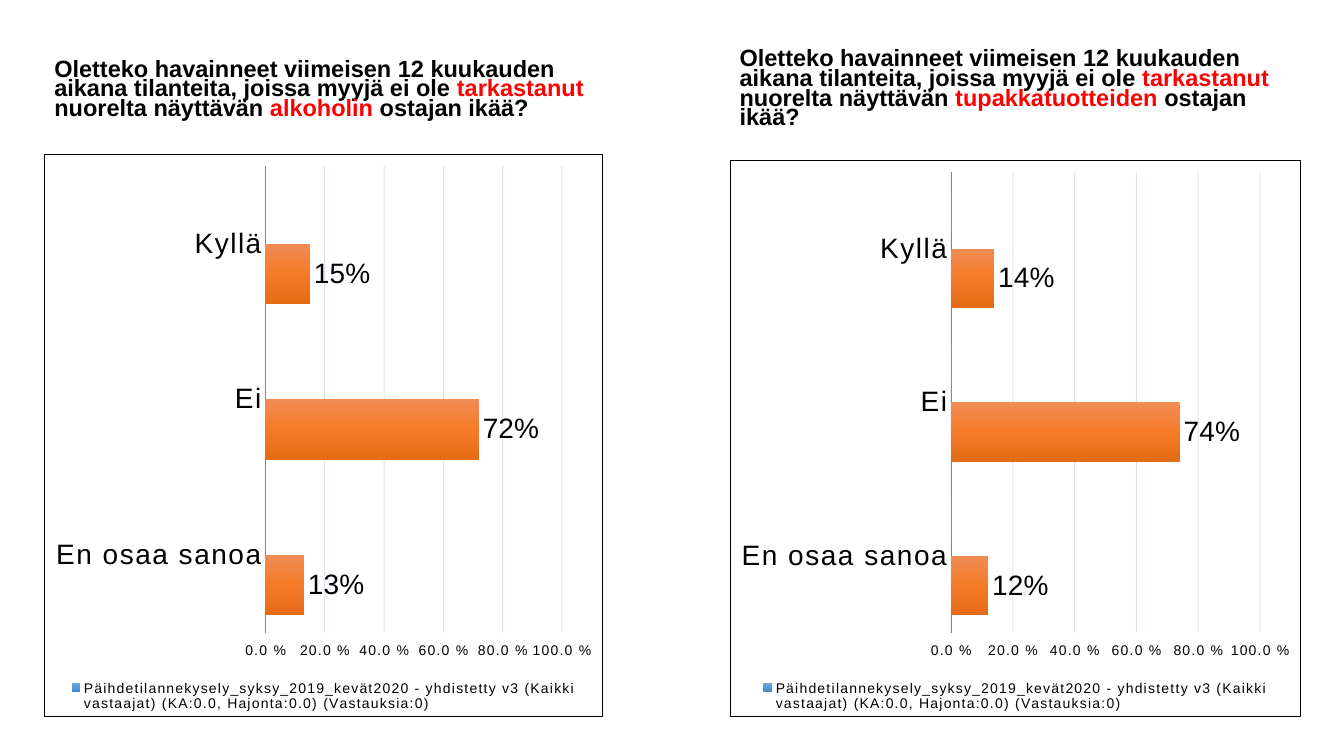
import copy

import pptx
import pptx.chart.data
import pptx.dml.color
import pptx.enum.chart
import pptx.enum.text
import pptx.oxml
import pptx.oxml.ns
import pptx.util
from pptx.util import Cm

COLOURS = {
    "text": "000000",
    "emphasis": "FF0000",
    "grid": "4F81BD",
    "axis": "868686",
}
SURVEY_GRADIENT = ("71A6DB", "559BDB", "438AC9")
ANSWER_GRADIENT = ("F18C55", "F67B28", "E56B17")
FONT = "Arial"
ANSWERS = ("Kyllä", "Ei", "En osaa sanoa")
SURVEY = ("Päihdetilannekysely_syksy_2019_kevät2020 - yhdistetty v3 "
          "(Kaikki vastaajat) (KA:0.0, Hajonta:0.0) (Vastauksia:0)")


def rgb(hex_string):
    return pptx.dml.color.RGBColor.from_string(hex_string)


def style_font(font, size, colour="text"):
    font.name = FONT
    font.size = pptx.util.Pt(size)
    font.color.rgb = rgb(COLOURS[colour])


def add_question(slide, product, left, top, width):
    """Add the question, with the checked product in the emphasis colour."""
    question = slide.shapes.add_textbox(Cm(left), Cm(top), Cm(width), Cm(2.29)).text_frame
    question.word_wrap = True
    question.vertical_anchor = pptx.enum.text.MSO_ANCHOR.BOTTOM
    question.margin_bottom = Cm(0.62)
    paragraph = question.paragraphs[0]
    paragraph.line_spacing = 0.7
    paragraph.space_before = pptx.util.Pt(10)
    parts = (
        ("Oletteko havainneet viimeisen 12 kuukauden aikana tilanteita, "
         "joissa myyjä ei ole ", "text"),
        ("tarkastanut ", "emphasis"),
        ("nuorelta näyttävän ", "text"),
        (product + " ", "emphasis"),
        ("ostajan ikää?", "text"),
    )
    for wording, colour in parts:
        run = paragraph.add_run()
        run.text = wording
        style_font(run.font, 16.8, colour)
        run.font.bold = True


def fill_bars(series, gradient):
    """Fill the bars from top to bottom with a three-colour gradient."""
    fill = series.format.fill
    fill.gradient()
    fill.gradient_angle = 270
    first = series._element.xpath("c:spPr//a:gs")[0]
    middle = copy.deepcopy(first)
    middle.set("pos", "50000")
    first.addnext(middle)
    for stop, colour in zip(fill.gradient_stops, gradient):
        stop.color.rgb = rgb(colour)


def style_answer_axis(axis):
    axis.reverse_order = True
    axis.major_tick_mark = pptx.enum.chart.XL_TICK_MARK.NONE
    axis.format.line.color.rgb = rgb(COLOURS["axis"])
    style_font(axis.tick_labels.font, 20)


def style_share_axis(axis):
    axis.minimum_scale, axis.maximum_scale, axis.major_unit = 0, 1, 0.2
    axis.major_tick_mark = pptx.enum.chart.XL_TICK_MARK.NONE
    axis.tick_label_position = pptx.enum.chart.XL_TICK_LABEL_POSITION.HIGH
    axis.format.line.fill.background()
    axis.tick_labels.number_format = "0.0\\ %"
    axis.tick_labels.number_format_is_linked = False
    style_font(axis.tick_labels.font, 10)
    grid = axis.major_gridlines.format.line
    grid.width = pptx.util.Pt(0.75)
    grid.color.rgb = rgb(COLOURS["grid"])
    grid_colour = axis._element.xpath("c:majorGridlines//a:srgbClr")[0]
    alpha = pptx.oxml.parse_xml(
        f'<a:alpha {pptx.oxml.ns.nsdecls("a")} val="20000"/>')
    grid_colour.append(alpha)


def style_legend(chart):
    """Place the legend at the bottom and keep only the survey's entry."""
    chart.has_legend = True
    legend = chart.legend
    legend.position = pptx.enum.chart.XL_LEGEND_POSITION.BOTTOM
    legend.include_in_layout = False
    style_font(legend.font, 10)
    hidden_entry = pptx.oxml.parse_xml(
        f'<c:legendEntry {pptx.oxml.ns.nsdecls("c")}>'
        '<c:idx val="0"/><c:delete val="1"/></c:legendEntry>')
    legend._element.xpath("c:legendPos")[0].addnext(hidden_entry)


def add_border(chart):
    border = pptx.oxml.parse_xml(
        f'<c:spPr {pptx.oxml.ns.nsdecls("c", "a")}><a:noFill/><a:ln w="9525">'
        f'<a:solidFill><a:srgbClr val="{COLOURS["text"]}"/></a:solidFill>'
        '</a:ln></c:spPr>')
    chart._chartSpace.xpath("c:chart")[0].addnext(border)


def add_answer_chart(slide, shares, left, top, width, height):
    data = pptx.chart.data.CategoryChartData()
    data.categories = ANSWERS
    data.add_series(SURVEY, (0, 0, 0))
    data.add_series("", shares)
    chart = slide.shapes.add_chart(
        pptx.enum.chart.XL_CHART_TYPE.BAR_CLUSTERED,
        Cm(left), Cm(top), Cm(width), Cm(height), data).chart
    chart.has_title = False
    style_font(chart.font, 10)
    chart.font.name = "Calibri"

    plot = chart.plots[0]
    plot.gap_width = 58
    plot.vary_by_categories = False
    for series, gradient in zip(plot.series, (SURVEY_GRADIENT, ANSWER_GRADIENT)):
        fill_bars(series, gradient)
    labels = plot.series[1].data_labels
    labels.show_value = True
    labels.number_format = "0%"
    labels.number_format_is_linked = False
    style_font(labels.font, 20)

    style_answer_axis(chart.category_axis)
    style_share_axis(chart.value_axis)
    style_legend(chart)
    for part in (chart.category_axis, chart.value_axis, chart.legend):
        for properties in part._element.xpath(".//a:defRPr"):
            properties.set("spc", "100")
    add_border(chart)


def main():
    presentation = pptx.Presentation()
    presentation.slide_width = Cm(33.87)
    presentation.slide_height = Cm(19.05)
    slide = presentation.slides.add_slide(presentation.slide_layouts[6])

    add_question(slide, "alkoholin", 1.12, 1.37, 14.33)
    add_answer_chart(slide, (0.15, 0.72, 0.13), 1.12, 3.89, 14.07, 14.17)
    add_question(slide, "tupakkatuotteiden", 18.39, 1.6, 14.4)
    add_answer_chart(slide, (0.14, 0.74, 0.12), 18.39, 4.04, 14.4, 14.02)

    presentation.save("out.pptx")


if __name__ == "__main__":
    main()
